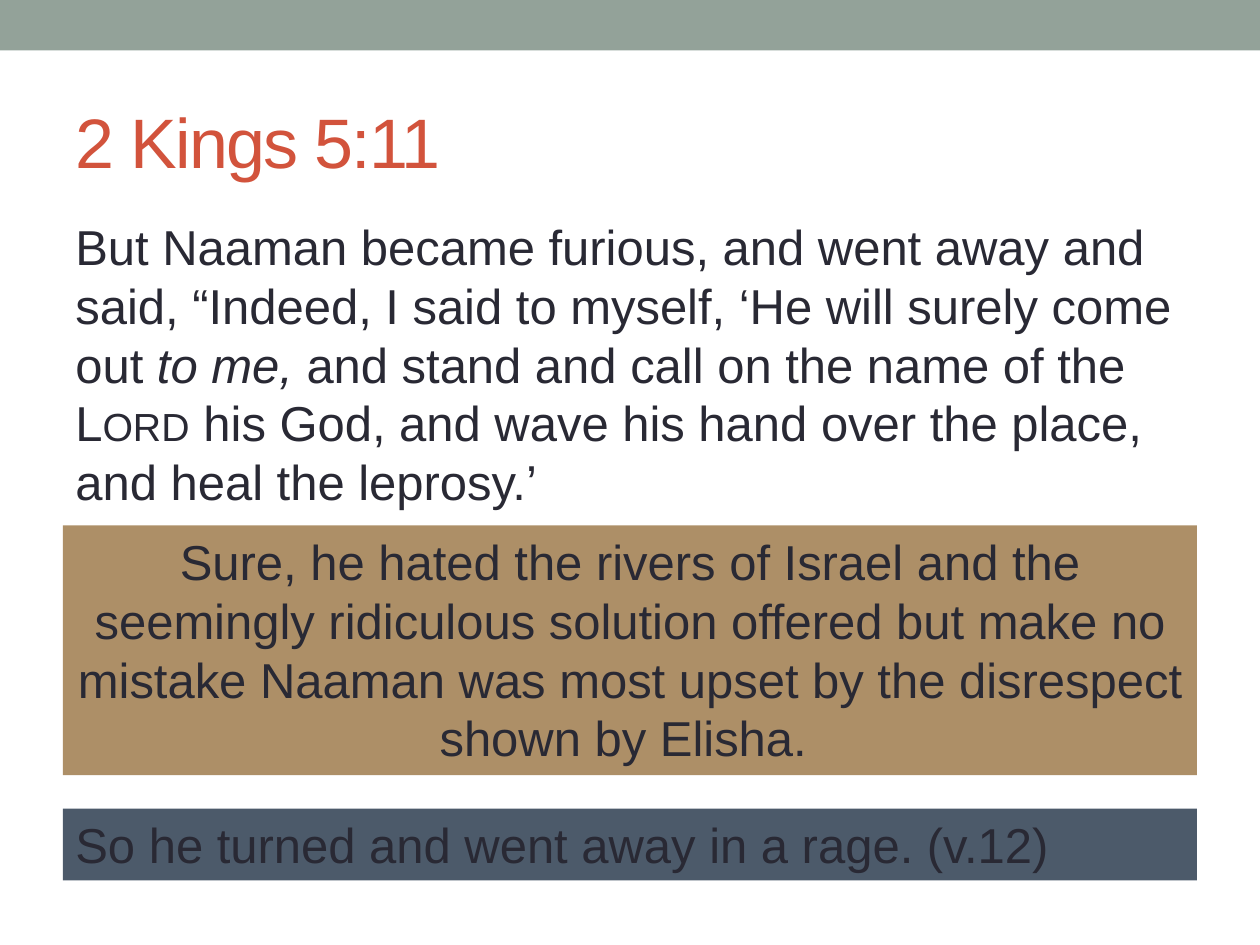
import pptx
import pptx.util
import pptx.dml.color
import pptx.enum.shapes
import pptx.enum.text

Cm, Pt = pptx.util.Cm, pptx.util.Pt
RGB = pptx.dml.color.RGBColor
ALIGN = pptx.enum.text.PP_ALIGN
ANCHOR = pptx.enum.text.MSO_ANCHOR
FIT = pptx.enum.text.MSO_AUTO_SIZE
RECT = pptx.enum.shapes.MSO_SHAPE.RECTANGLE

SAGE = RGB(0x93, 0xA2, 0x99)
RED = RGB(0xD2, 0x53, 0x3C)
INK = RGB(0x29, 0x29, 0x34)
TAN = RGB(0xAD, 0x8F, 0x67)
SLATE = RGB(0x4C, 0x5A, 0x6A)
LEFT, WIDTH = Cm(1.27), Cm(22.86)


def add_run(para, text, size=28, color=INK):
    run = para.add_run()
    run.text = text
    run.font.name = "Arial"
    run.font.size = Pt(size)
    run.font.color.rgb = color
    return run


def add_bar(left, top, width, height, color):
    bar = slide.shapes.add_shape(RECT, left, top, width, height)
    bar.shadow.inherit = False
    bar.fill.solid()
    bar.fill.fore_color.rgb = color
    bar.line.fill.background()
    return bar


prs = pptx.Presentation()
prs.slide_width, prs.slide_height = Cm(25.4), Cm(19.05)
slide = prs.slides.add_slide(prs.slide_layouts[5])

add_bar(0, 0, prs.slide_width, Cm(1.02), SAGE)

# Title
title = slide.shapes.title
title.left, title.top, title.width, title.height = LEFT, Cm(1.47), WIDTH, Cm(2.74)
title.text_frame.vertical_anchor = ANCHOR.MIDDLE
title.text_frame.auto_size = FIT.NONE
para = title.text_frame.paragraphs[0]
para.alignment = ALIGN.LEFT
run = add_run(para, "2 Kings 5:11", 40, RED)
run._r.get_or_add_rPr().set("spc", "-100")

# Verse
verse = slide.shapes.add_textbox(LEFT, Cm(4.24), WIDTH, Cm(6.78))
verse.text_frame.word_wrap = True
para = verse.text_frame.paragraphs[0]
add_run(para, "But Naaman became furious, and went away and said, “Indeed, "
              "I said to myself, ‘He will surely come out ")
add_run(para, "to me,").font.italic = True
add_run(para, " and stand and call on the name of the ")
lord = add_run(para, "Lord")
lord._r.get_or_add_rPr().set("cap", "small")
add_run(para, " his God, and wave his hand over the place, and heal the leprosy.’")

# Comments
notes = [
    (10.59, 5.04, TAN, ALIGN.CENTER,
     "Sure, he hated the rivers of Israel and the seemingly ridiculous solution "
     "offered but make no mistake Naaman was most upset by the disrespect "
     "shown by Elisha. "),
    (16.3, 1.45, SLATE, ALIGN.LEFT,
     "So he turned and went away in a rage. (v.12)"),
]
for top, height, color, align, text in notes:
    frame = add_bar(LEFT, Cm(top), WIDTH, Cm(height), color).text_frame
    frame.word_wrap = True
    frame.auto_size = FIT.SHAPE_TO_FIT_TEXT
    frame.vertical_anchor = ANCHOR.TOP
    para = frame.paragraphs[0]
    para.alignment = align
    add_run(para, text)

prs.save("out.pptx")
